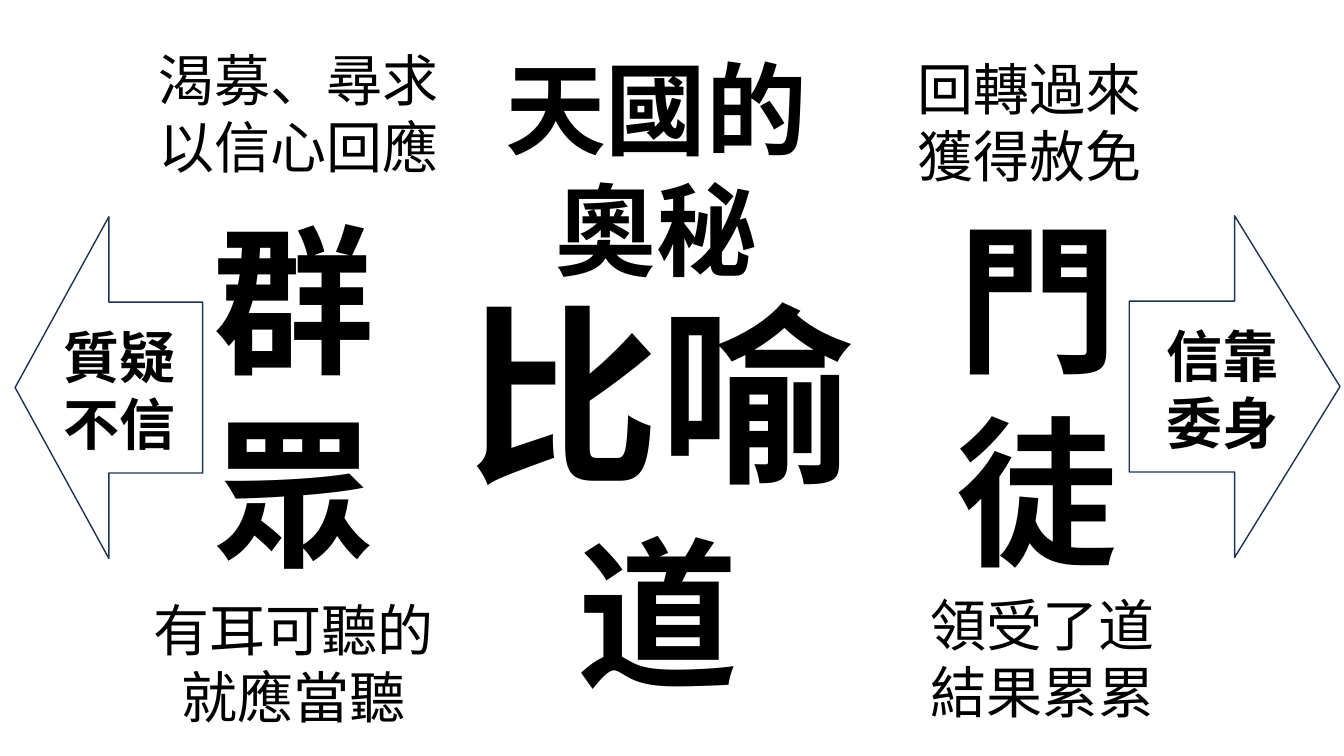
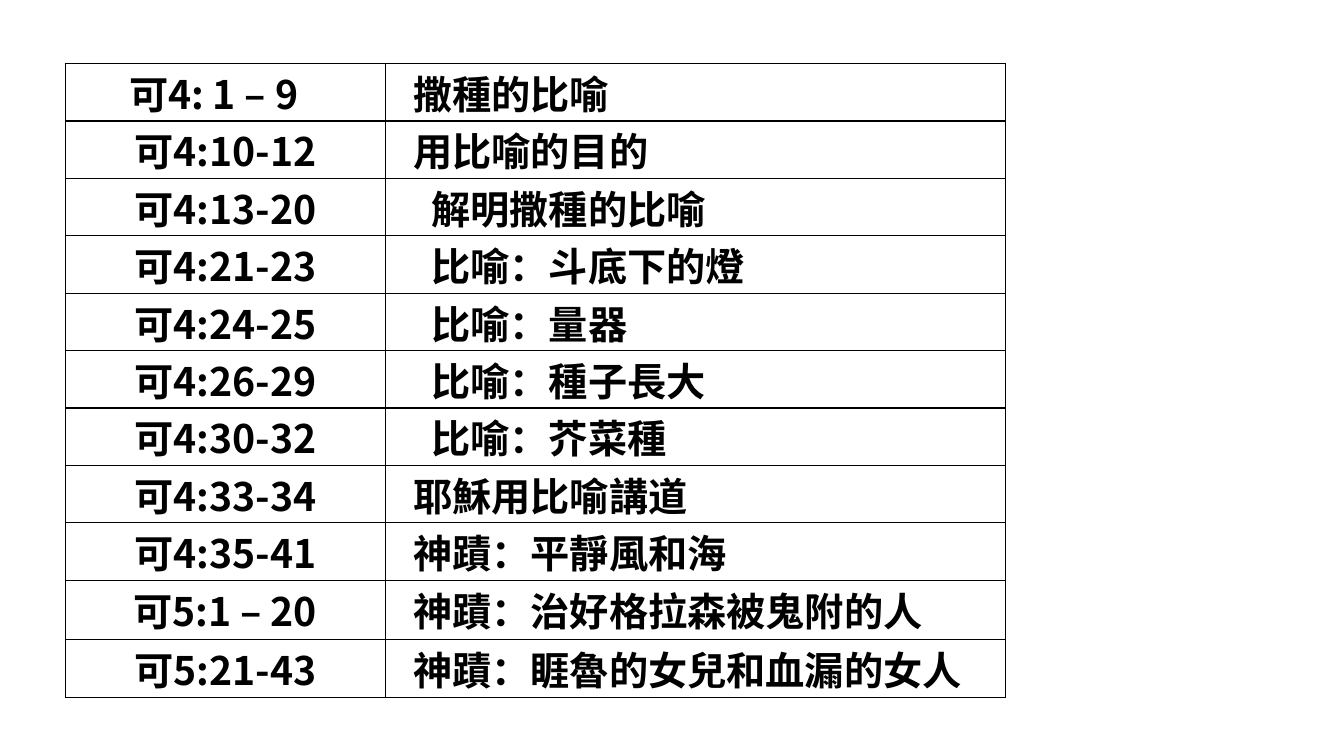
from dataclasses import dataclass

from lxml import etree
from pptx import Presentation
from pptx.dml.color import RGBColor
from pptx.enum.shapes import MSO_SHAPE
from pptx.enum.text import MSO_ANCHOR, PP_ALIGN
from pptx.oxml.ns import qn
from pptx.util import Inches, Pt

LEFT, CENTER = PP_ALIGN.LEFT, PP_ALIGN.CENTER
TOP = MSO_ANCHOR.TOP
LEFT_ARROW, RIGHT_ARROW = MSO_SHAPE.LEFT_ARROW, MSO_SHAPE.RIGHT_ARROW


@dataclass(frozen=True)
class Theme:
    font: str = "Noto Sans CJK SC"
    text: RGBColor = RGBColor(0, 0, 0)
    paper: RGBColor = RGBColor(255, 255, 255)
    arrow_line: RGBColor = RGBColor(0x1E, 0x32, 0x56)
    border: str = "000000"
    line_width: float = 1
    line_height: float = 1.2
    hero: int = 138
    role: int = 115
    heading: int = 72
    note: int = 40
    table: int = 28


THEME = Theme()


@dataclass(frozen=True)
class Label:
    lines: tuple[str, ...]
    left: float
    top: float
    width: float
    height: float
    size: int
    bold: bool = True
    alignment: PP_ALIGN = CENTER


@dataclass(frozen=True)
class Arrow:
    preset: MSO_SHAPE
    left: float
    top: float
    width: float
    height: float = 3.39


@dataclass(frozen=True)
class Passage:
    verses: str
    subject: str
    nested: bool = False
    height: float = 0.57
    verses_alignment: PP_ALIGN = CENTER


ARROWS = (
    Arrow(LEFT_ARROW, 0.15, 2.15, 1.86),
    Arrow(RIGHT_ARROW, 11.2, 2.14, 2.09),
)

LABELS = (
    Label(("比喻",), 4.53, 2.68, 4.28, 2.42, THEME.hero, alignment=LEFT),
    Label(("天國的", "奧秘"), 3.74, 0.41, 5.54, 2.52, THEME.heading),
    Label(("道",), 4.97, 5.05, 3.12, 2.04, THEME.role),
    Label(("群眾",), 1.41, 1.94, 3.02, 3.97, THEME.role),
    Label(("門徒",), 9.14, 1.93, 2.3, 3.97, THEME.role),
    Label(("質疑", "不信"), 0.15, 3.15, 2.07, 1.45, THEME.note),
    Label(("信靠", "委身"), 10.95, 3.14, 2.34, 1.45, THEME.note),
    Label(("渴募、尋求", "以信心回應"), 1.28, 0.4, 3.36, 1.45, THEME.note, False),
    Label(("有耳可聽的", "就應當聽"), 1.4, 5.86, 3.02, 1.45, THEME.note, False),
    Label(("回轉過來", "獲得赦免"), 9, 0.49, 2.73, 1.45, THEME.note, False, LEFT),
    Label(("領受了道", "結果累累"), 9.11, 5.81, 2.46, 1.45, THEME.note, False),
)

PASSAGES = (
    Passage("可4: 1 – 9", "撒種的比喻", verses_alignment=LEFT),
    Passage("可4:10-12", "用比喻的目的"),
    Passage("可4:13-20", "解明撒種的比喻", nested=True),
    Passage("可4:21-23", "比喻：斗底下的燈", nested=True),
    Passage("可4:24-25", "比喻：量器", nested=True),
    Passage("可4:26-29", "比喻：種子長大", nested=True),
    Passage("可4:30-32", "比喻：芥菜種", nested=True),
    Passage("可4:33-34", "耶穌用比喻講道"),
    Passage("可4:35-41", "神蹟：平靜風和海"),
    Passage("可5:1 – 20", "神蹟：治好格拉森被鬼附的人", height=0.59),
    Passage("可5:21-43", "神蹟：睚魯的女兒和血漏的女人"),
)
COLUMN_WIDTHS = (3.17, 6.15)
VERSES_INDENT = 0.63
SUBJECT_INDENT, NESTED_INDENT = 0.28, 0.46


def style_paragraph(paragraph, size: int, bold: bool, alignment: PP_ALIGN) -> None:
    paragraph.alignment = alignment
    paragraph.line_spacing = Pt(size * THEME.line_height)
    font = paragraph.font
    font.size, font.bold = Pt(size), bold
    font.color.rgb = THEME.text
    font.name = THEME.font
    defaults = paragraph._p.pPr.find(qn("a:defRPr"))
    etree.SubElement(defaults, qn("a:ea"), typeface=THEME.font)


def add_label(slide, label: Label) -> None:
    box = slide.shapes.add_textbox(
        Inches(label.left), Inches(label.top), Inches(label.width), Inches(label.height)
    )
    frame = box.text_frame
    frame.word_wrap = True
    frame.text = "\n".join(label.lines)
    for paragraph in frame.paragraphs:
        style_paragraph(paragraph, label.size, label.bold, label.alignment)


def add_arrow(slide, arrow: Arrow) -> None:
    shape = slide.shapes.add_shape(
        arrow.preset,
        Inches(arrow.left), Inches(arrow.top), Inches(arrow.width), Inches(arrow.height),
    )
    shape.shadow.inherit = False
    shape.fill.background()
    shape.line.color.rgb = THEME.arrow_line
    shape.line.width = Pt(THEME.line_width)


def add_borders(cell) -> None:
    properties = cell._tc.get_or_add_tcPr()
    for position, side in enumerate(("lnL", "lnR", "lnT", "lnB")):
        line = etree.Element(qn(f"a:{side}"), w=str(Pt(THEME.line_width)))
        fill = etree.SubElement(line, qn("a:solidFill"))
        etree.SubElement(fill, qn("a:srgbClr"), val=THEME.border)
        properties.insert(position, line)


def fill_cell(cell, text: str, indent: float, alignment: PP_ALIGN) -> None:
    cell.text = text
    cell.vertical_anchor = TOP
    cell.margin_left, cell.margin_right = Inches(indent), Inches(0.1)
    cell.margin_top, cell.margin_bottom = Inches(0.1), Inches(0)
    cell.fill.solid()
    cell.fill.fore_color.rgb = THEME.paper
    add_borders(cell)
    style_paragraph(cell.text_frame.paragraphs[0], THEME.table, True, alignment)


def add_passage_table(slide) -> None:
    frame = slide.shapes.add_table(
        len(PASSAGES), len(COLUMN_WIDTHS),
        Inches(0.65), Inches(0.63),
        Inches(sum(COLUMN_WIDTHS)), Inches(sum(passage.height for passage in PASSAGES)),
    )
    table = frame.table
    table.first_row = table.horz_banding = False
    for column, width in zip(table.columns, COLUMN_WIDTHS):
        column.width = Inches(width)
    for row, passage in zip(table.rows, PASSAGES):
        row.height = Inches(passage.height)
        verses_cell, subject_cell = row.cells
        verses_indent = VERSES_INDENT if passage.verses_alignment == LEFT else 0.1
        subject_indent = NESTED_INDENT if passage.nested else SUBJECT_INDENT
        fill_cell(verses_cell, passage.verses, verses_indent, passage.verses_alignment)
        fill_cell(subject_cell, passage.subject, subject_indent, LEFT)


def main() -> None:
    presentation = Presentation()
    presentation.slide_width, presentation.slide_height = Inches(13.33), Inches(7.5)
    blank_layout = presentation.slide_layouts[6]

    parable_slide = presentation.slides.add_slide(blank_layout)
    for arrow in ARROWS:
        add_arrow(parable_slide, arrow)
    for label in LABELS:
        add_label(parable_slide, label)

    add_passage_table(presentation.slides.add_slide(blank_layout))
    presentation.save("out.pptx")


if __name__ == "__main__":
    main()
